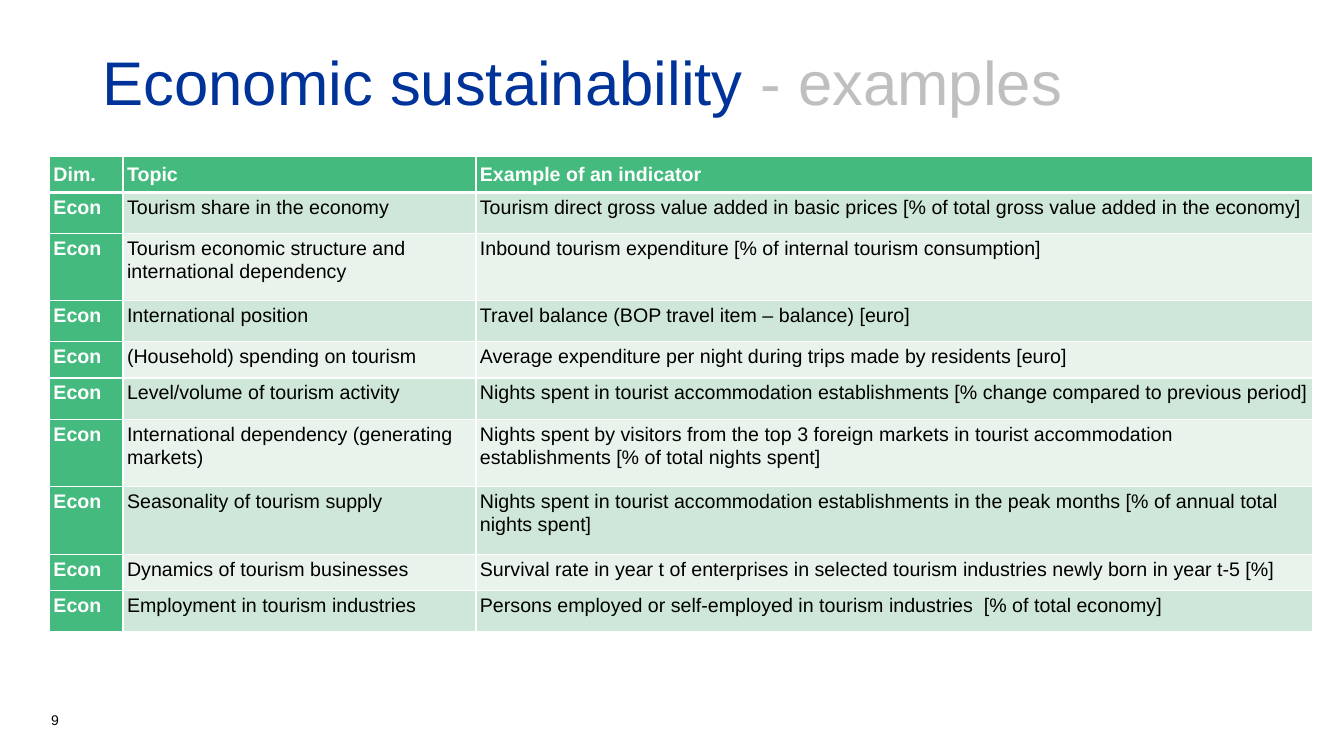
from pptx import Presentation
from pptx import util as u
from pptx.dml.color import RGBColor
from pptx.enum import shapes, text
from pptx.oxml.ns import qn
from lxml import etree

# Content
TITLE = [("Economic sustainability ", "navy"), ("- examples", "grey")]
PAGE_NUMBER = [("9", "black")]
HEADER = ("Dim.", "Topic", "Example of an indicator")
DIMENSION = "Econ"
INDICATORS = [  # row height, topic, example
    (0.41, "Tourism share in the economy",
     "Tourism direct gross value added in basic prices [% of total gross value added in the economy]"),
    (0.66, "Tourism economic structure and international dependency",
     "Inbound tourism expenditure [% of internal tourism consumption]"),
    (0.41, "International position",
     "Travel balance (BOP travel item – balance) [euro]"),
    (0.36, "(Household) spending on tourism",
     "Average expenditure per night during trips made by residents [euro]"),
    (0.41, "Level/volume of tourism activity",
     "Nights spent in tourist accommodation establishments [% change compared to previous period]"),
    (0.67, "International dependency (generating markets)",
     "Nights spent by visitors from the top 3 foreign markets in tourist accommodation "
     "establishments [% of total nights spent]"),
    (0.67, "Seasonality of tourism supply",
     "Nights spent in tourist accommodation establishments in the peak months "
     "[% of annual total nights spent]"),
    (0.36, "Dynamics of tourism businesses",
     "Survival rate in year t of enterprises in selected tourism industries newly born in year t-5 [%]"),
    (0.41, "Employment in tourism industries",
     "Persons employed or self-employed in tourism industries  [% of total economy]"),
]

# Format
COLORS = {"navy": "003399", "grey": "BFBFBF", "black": "000000", "white": "FFFFFF",
          "green": "44BA7E", "band_dark": "CFE7D8", "band_light": "E9F3EC"}
FONT = "Arial"
SLIDE_SIZE = (13.33, 7.5)
TITLE_BOX = (0.92, 0.4, 11.5, 0.89)
NUMBER_BOX = (0.41, 6.87, 3, 0.4)
TABLE_CORNER = (0.49, 1.55)
COLUMNS = (0.73, 3.5, 8.3)
HEADER_HEIGHT = 0.36
CELL_MARGINS = {"margin_left": u.Inches(0.04), "margin_right": u.Inches(0.04),
                "margin_top": u.Inches(0.03), "margin_bottom": u.Inches(0.03)}
CELL_PARAGRAPH = {"line_spacing": 1.05, "space_after": u.Pt(12)}


def color(name):
    return RGBColor.from_string(COLORS[name])


def apply(target, values):
    for name, value in values.items():
        setattr(target, name, value)


def add_run(paragraph, words, color_name, size, bold=False):
    run = paragraph.add_run()
    run.text = words
    apply(run.font, {"name": FONT, "size": u.Pt(size), "bold": bold})
    run.font.color.rgb = color(color_name)


def write_text(shape, runs, size, anchor, line_spacing=1.0):
    frame = shape.text_frame
    apply(frame, {"word_wrap": True, "vertical_anchor": anchor})
    paragraph = frame.paragraphs[0]
    apply(paragraph, {"line_spacing": line_spacing, "alignment": text.PP_ALIGN.LEFT})
    for words, color_name in runs:
        add_run(paragraph, words, color_name, size)


def add_borders(cell, widths):
    properties = cell._tc.get_or_add_tcPr()
    for index, (side, width) in enumerate(widths.items()):
        line = etree.Element(qn(f"a:ln{side}"), w=str(u.Pt(width)))
        fill = etree.SubElement(line, qn("a:solidFill"))
        etree.SubElement(fill, qn("a:srgbClr"), val=COLORS["white"])
        properties.insert(index, line)


def fill_cell(cell, words, row, column):
    is_header = row == 0
    is_label = is_header or column == 0
    apply(cell, CELL_MARGINS)
    cell.vertical_anchor = text.MSO_ANCHOR.MIDDLE if is_header else text.MSO_ANCHOR.TOP
    cell.fill.solid()
    band = "band_dark" if row % 2 else "band_light"
    cell.fill.fore_color.rgb = color("green" if is_label else band)
    paragraph = cell.text_frame.paragraphs[0]
    apply(paragraph, CELL_PARAGRAPH)
    add_run(paragraph, words, "white" if is_label else "black", 14, is_label)
    add_borders(cell, {"L": 1, "R": 1, "T": 3 if row == 1 else 1, "B": 3 if is_header else 1})


presentation = Presentation()
presentation.slide_width, presentation.slide_height = map(u.Inches, SLIDE_SIZE)
slide = presentation.slides.add_slide(presentation.slide_layouts[6])

# Title on a white panel
title = slide.shapes.add_shape(shapes.MSO_SHAPE.RECTANGLE, *map(u.Inches, TITLE_BOX))
title.shadow.inherit = False
title.fill.solid()
title.fill.fore_color.rgb = color("white")
title.line.fill.background()
write_text(title, TITLE, 44, text.MSO_ANCHOR.MIDDLE, 0.9)

# Indicator table
rows = [HEADER] + [(DIMENSION, topic, example) for _, topic, example in INDICATORS]
heights = [HEADER_HEIGHT] + [height for height, _, _ in INDICATORS]
table = slide.shapes.add_table(
    len(rows), len(COLUMNS),
    *map(u.Inches, (*TABLE_CORNER, sum(COLUMNS), sum(heights)))).table
for column, width in zip(table.columns, COLUMNS):
    column.width = u.Inches(width)
for row, (cells, height) in enumerate(zip(rows, heights)):
    table.rows[row].height = u.Inches(height)
    for column, words in enumerate(cells):
        fill_cell(table.cell(row, column), words, row, column)
table.cell(len(rows) - 1, 2).text_frame.paragraphs[0].alignment = text.PP_ALIGN.JUSTIFY

# Page number
number = slide.shapes.add_textbox(*map(u.Inches, NUMBER_BOX))
write_text(number, PAGE_NUMBER, 10, text.MSO_ANCHOR.BOTTOM)

presentation.save("out.pptx")
